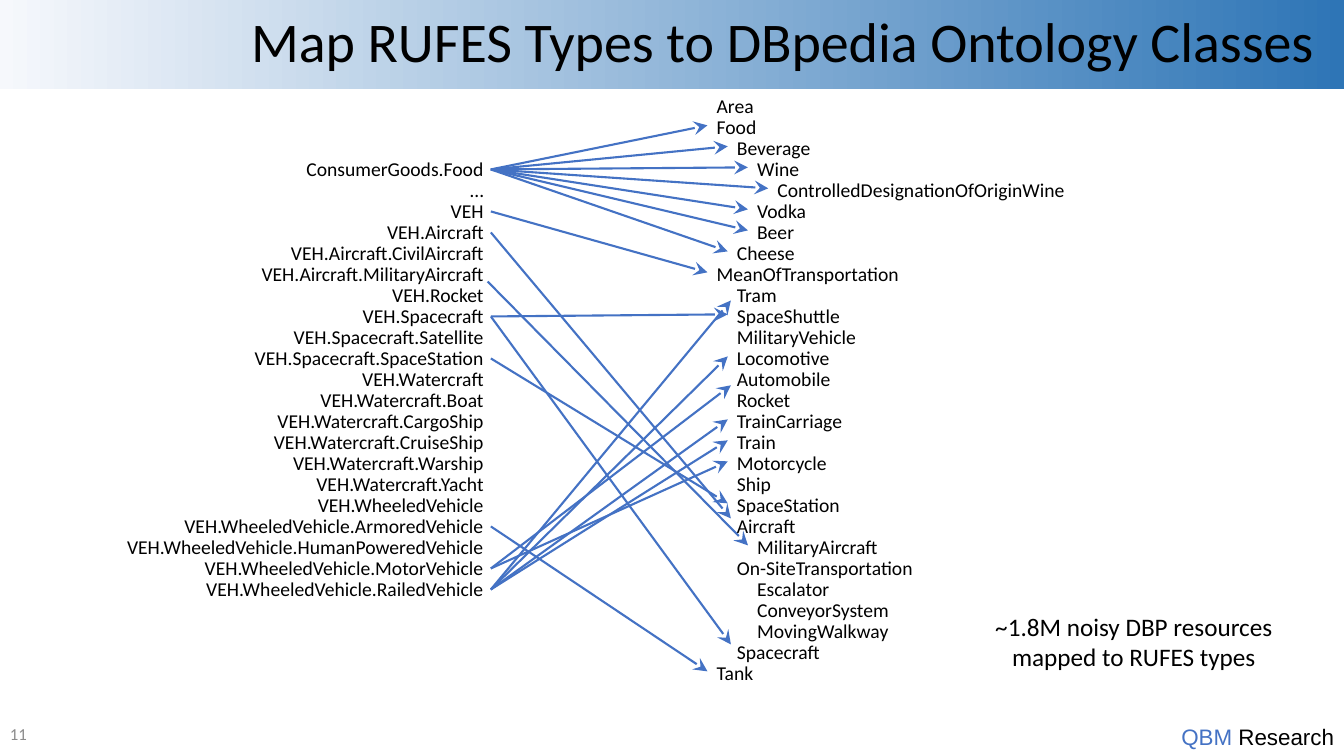
from lxml.etree import SubElement
from pptx import Presentation
from pptx.dml.color import RGBColor
from pptx.enum.shapes import MSO_CONNECTOR, MSO_SHAPE
from pptx.enum.text import MSO_ANCHOR, PP_ALIGN
from pptx.oxml.ns import qn
from pptx.util import Cm, Pt

COLORS = {"black": "000000", "blue": "4472C4", "gray": "8C8C8C",
          "fade": "F6F8FC", "deep": "2E75B6"}
TITLE = "Map RUFES Types to DBpedia Ontology Classes"
NOTE = "~1.8M noisy DBP resources mapped to RUFES types"

TYPES = [
    "ConsumerGoods.Food", "…", "VEH", "VEH.Aircraft",
    "VEH.Aircraft.CivilAircraft", "VEH.Aircraft.MilitaryAircraft",
    "VEH.Rocket", "VEH.Spacecraft", "VEH.Spacecraft.Satellite",
    "VEH.Spacecraft.SpaceStation", "VEH.Watercraft", "VEH.Watercraft.Boat",
    "VEH.Watercraft.CargoShip", "VEH.Watercraft.CruiseShip",
    "VEH.Watercraft.Warship", "VEH.Watercraft.Yacht", "VEH.WheeledVehicle",
    "VEH.WheeledVehicle.ArmoredVehicle",
    "VEH.WheeledVehicle.HumanPoweredVehicle",
    "VEH.WheeledVehicle.MotorVehicle", "VEH.WheeledVehicle.RailedVehicle",
]
CLASSES = [
    ("Area", 0), ("Food", 0), ("Beverage", 1), ("Wine", 2),
    ("ControlledDesignationOfOriginWine", 3), ("Vodka", 2), ("Beer", 2),
    ("Cheese", 1), ("MeanOfTransportation", 0), ("Tram", 1),
    ("SpaceShuttle", 1), ("MilitaryVehicle", 1), ("Locomotive", 1),
    ("Automobile", 1), ("Rocket", 1), ("TrainCarriage", 1), ("Train", 1),
    ("Motorcycle", 1), ("Ship", 1), ("SpaceStation", 1), ("Aircraft", 1),
    ("MilitaryAircraft", 2), ("On-SiteTransportation", 1), ("Escalator", 2),
    ("ConveyorSystem", 2), ("MovingWalkway", 2), ("Spacecraft", 1), ("Tank", 0),
]
MAPPING = {
    "ConsumerGoods.Food": ["Food", "Beverage", "Wine",
                           "ControlledDesignationOfOriginWine",
                           "Vodka", "Beer", "Cheese"],
    "VEH": ["MeanOfTransportation"],
    "VEH.Aircraft": ["Aircraft"],
    "VEH.Aircraft.MilitaryAircraft": ["MilitaryAircraft"],
    "VEH.Spacecraft.SpaceStation": ["SpaceStation"],
    "VEH.WheeledVehicle.ArmoredVehicle": ["Tank"],
    "VEH.WheeledVehicle.MotorVehicle": ["Automobile", "Motorcycle"],
    "VEH.WheeledVehicle.RailedVehicle": ["Locomotive", "TrainCarriage",
                                         "Train", "Tram"],
    "VEH.Spacecraft": ["SpaceShuttle", "Spacecraft"],
}
NUDGES = {"VEH.Aircraft.MilitaryAircraft": (-0.08, 0.18), "Tram": (0.08, 0.18),
          "Automobile": (0.08, 0.2), "Aircraft": (0.08, -0.15),
          "Spacecraft": (0.08, -0.15)}
INDENT = 0.51
PITCH = Pt(15).cm


def rgb(name):
    return RGBColor.from_string(COLORS[name])


def add_run(p, text, size, color="black", font="Calibri"):
    r = p.add_run()
    r.text = text
    r.font.size, r.font.name = Pt(size), font
    r.font.color.rgb = rgb(color)


def add_box(s, x, y, w, h):
    tf = s.shapes.add_textbox(Cm(x), Cm(y), Cm(w), Cm(h)).text_frame
    tf.word_wrap = True
    return tf


def add_list(s, rows, box, align):
    tf = add_box(s, *box)
    for i, (name, level) in enumerate(rows):
        p = tf.add_paragraph() if i else tf.paragraphs[0]
        p.alignment, p.line_spacing = align, Pt(15)
        if level:
            p._p.get_or_add_pPr().set("marL", str(Cm(INDENT * level)))
        add_run(p, name, 14)


def add_arrow(s, start, end):
    c = s.shapes.add_connector(MSO_CONNECTOR.STRAIGHT,
                               *(Cm(v) for v in start + end))
    c.line.color.rgb, c.line.width = rgb("blue"), Pt(1.5)
    SubElement(c.line._get_or_add_ln(), qn("a:tailEnd"),
               type="stealth", w="lg", len="lg")
    SubElement(c._element.spPr, qn("a:effectLst"))


def anchor(name, x, y, row):
    dx, dy = NUDGES.get(name, (0, 0))
    return x + dx, y + PITCH * row + dy


def add_title(s, width):
    sp = s.shapes.add_shape(MSO_SHAPE.RECTANGLE, 0, 0, width, Cm(2.24))
    sp.shadow.inherit = False
    sp.line.fill.background()
    sp.fill.gradient()
    sp.fill.gradient_angle = 0
    for stop, color, pos in zip(sp.fill.gradient_stops, ("fade", "deep"), (0, 1)):
        stop.color.rgb, stop.position = rgb(color), pos
    tf = sp.text_frame
    tf.word_wrap, tf.vertical_anchor = True, MSO_ANCHOR.MIDDLE
    tf.margin_right = Cm(0.76)
    p = tf.paragraphs[0]
    p.alignment, p.line_spacing = PP_ALIGN.RIGHT, 0.9
    add_run(p, TITLE, 40)


def main():
    """Build the type mapping slide."""
    prs = Presentation()
    prs.slide_width, prs.slide_height = Cm(33.87), Cm(19.05)
    s = prs.slides.add_slide(prs.slide_layouts[6])

    p = add_box(s, 27.87, 18.11, 6, 0.94).paragraphs[0]
    p.alignment = PP_ALIGN.RIGHT
    add_run(p, "QBM", 16, "blue", "Arial")
    add_run(p, " Research", 16, "black", "Arial")

    starts = {t: anchor(t, 12.37, 4.27, i) for i, t in enumerate(TYPES)}
    ends = {c: anchor(c, 17.83 + INDENT * level, 2.63, i)
            for i, (c, level) in enumerate(CLASSES)}
    for source, targets in MAPPING.items():
        for target in targets:
            add_arrow(s, starts[source], ends[target])

    add_title(s, prs.slide_width)

    p = add_box(s, 24.51, 15.27, 8.13, 1.8).paragraphs[0]
    p.alignment = PP_ALIGN.CENTER
    add_run(p, NOTE, 18)

    tf = add_box(s, 0, 17.98, 1.07, 1.02)
    tf.vertical_anchor = MSO_ANCHOR.MIDDLE
    add_run(tf.paragraphs[0], "11", 12, "gray")

    add_list(s, [(t, 0) for t in TYPES], (2.71, 3.89, 9.73, 12.01), PP_ALIGN.RIGHT)
    add_list(s, CLASSES, (17.81, 2.31, 9.6, 15.21), PP_ALIGN.LEFT)
    prs.save("out.pptx")


if __name__ == "__main__":
    main()
